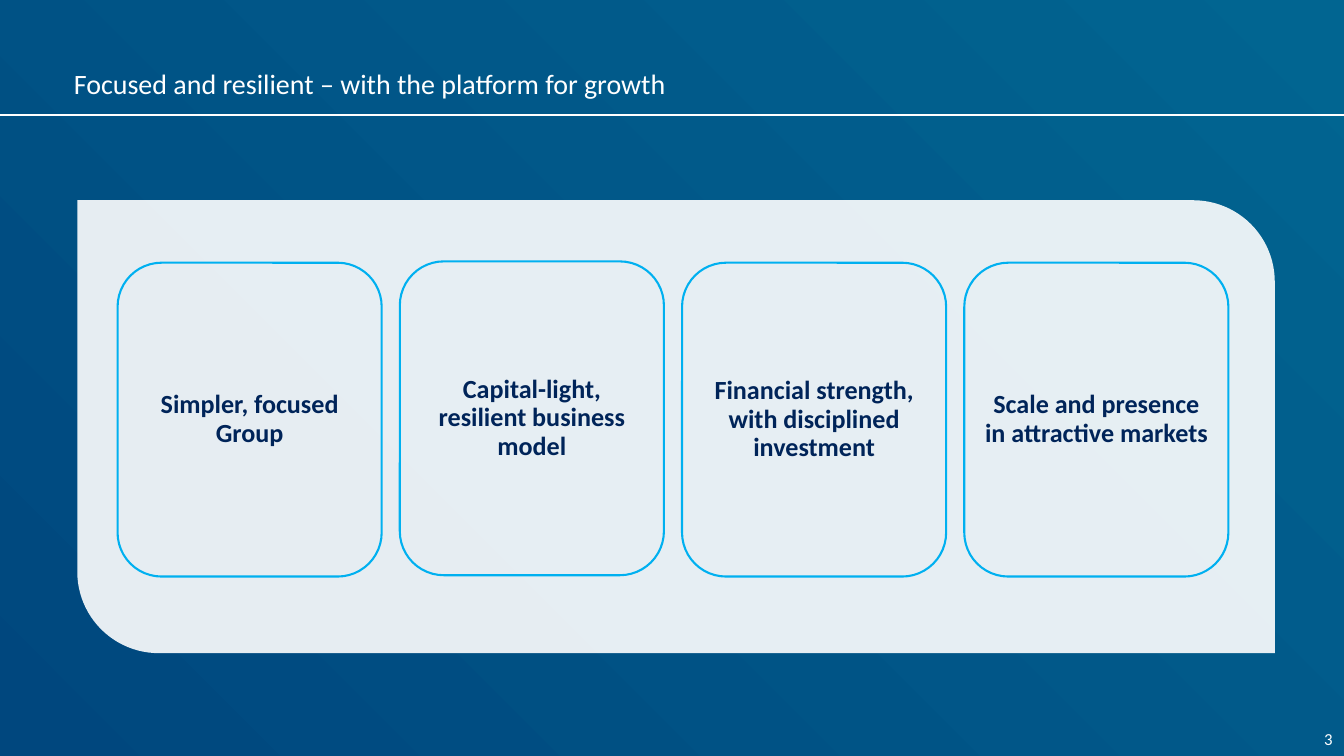
from lxml.etree import SubElement
from pptx import Presentation
from pptx.dml.color import RGBColor
from pptx.enum.shapes import MSO_CONNECTOR, MSO_SHAPE
from pptx.enum.text import MSO_ANCHOR as Anchor, PP_ALIGN as Align
from pptx.oxml.ns import qn
from pptx.util import Inches, Pt

WIDTH, HEIGHT = 20, 11.25
WHITE, NAVY, CYAN = "FFFFFF", "002459", "00B0F0"
DEEP_BLUE, TEAL = "00477E", "016591"

# Label and top edge of each card
STRENGTHS = [
    ("Simpler, focused Group", 3.91),
    ("Capital-light, resilient business model", 3.89),
    ("Financial strength, with disciplined investment", 3.91),
    ("Scale and presence in attractive markets", 3.91),
]


def color(value):
    return RGBColor.from_string(value)


def apply(target, formats):
    for name, value in formats.items():
        setattr(target, name, value)


def write(frame, text, ink, font, paragraph, inset=(0.1, 0.05), anchor=Anchor.TOP):
    across, down = map(Inches, inset)
    apply(frame, dict(word_wrap=True, vertical_anchor=anchor,
                      margin_left=across, margin_right=across,
                      margin_top=down, margin_bottom=down))
    line = frame.paragraphs[0]
    line.text = text
    apply(line, paragraph)
    apply(line.font, dict(name="Calibri", **font))
    line.font.color.rgb = color(ink)


def add_box(slide, preset, box):
    shape = slide.shapes.add_shape(preset, *map(Inches, box))
    shape.shadow.inherit = False
    shape.line.fill.background()
    return shape


def add_backdrop(slide, box):
    fill = add_box(slide, MSO_SHAPE.RECTANGLE, box).fill
    fill.gradient()
    fill.gradient_angle = 45
    for stop, shade in zip(fill.gradient_stops, (DEEP_BLUE, TEAL)):
        stop.color.rgb = color(shade)


def add_header(slide, box):
    # Rule across the slide
    rule_y = Inches(1.71)
    rule = slide.shapes.add_connector(
        MSO_CONNECTOR.STRAIGHT, 0, rule_y, Inches(WIDTH), rule_y)
    rule.line.color.rgb = color(WHITE)
    rule.line.width = Pt(1.5)
    SubElement(rule._element.spPr, qn("a:effectLst"))

    # Title
    title = slide.shapes.add_textbox(*map(Inches, box))
    write(title.text_frame, "Focused and resilient – with the platform for growth",
          WHITE, dict(size=Pt(30)), dict(line_spacing=Pt(42)))


def add_page_number(slide, box):
    number = slide.shapes.add_textbox(*map(Inches, box))
    write(number.text_frame, "3", WHITE, dict(size=Pt(18)), dict(alignment=Align.RIGHT))


def add_panel(slide, box):
    panel = add_box(slide, MSO_SHAPE.ROUND_2_DIAG_RECTANGLE, box)
    panel.adjustments[0] = 0
    panel.adjustments[1] = 0.18
    panel.fill.solid()
    panel.fill.fore_color.rgb = color(WHITE)
    tint = panel._element.spPr.find(qn("a:solidFill"))[0]
    SubElement(tint, qn("a:alpha"), val="90000")


def add_card(slide, box, label):
    card = add_box(slide, MSO_SHAPE.ROUNDED_RECTANGLE, box)
    card.fill.background()
    card.line.color.rgb = color(CYAN)
    card.line.width = Pt(2.25)
    write(card.text_frame, label, NAVY, dict(size=Pt(28), bold=True),
          dict(alignment=Align.CENTER, line_spacing=0.9),
          inset=(0.09, 0.09), anchor=Anchor.MIDDLE)


def add_strengths(slide, box):
    left, top, width, height = box
    add_panel(slide, box)
    for index, (label, card_top) in enumerate(STRENGTHS):
        add_card(slide, (left + 0.6 + index * 4.2, card_top, 3.93, 4.67), label)


def main():
    deck = Presentation()
    apply(deck, dict(slide_width=Inches(WIDTH), slide_height=Inches(HEIGHT)))
    slide = deck.slides.add_slide(deck.slide_layouts[6])
    add_backdrop(slide, (0, 0, WIDTH, HEIGHT))
    add_header(slide, (1, 0.86, 16.62, 0.68))
    add_page_number(slide, (17.6, 10.8, 2.33, 0.4))
    add_strengths(slide, (1.15, 2.98, 17.82, 6.74))
    deck.save("out.pptx")


if __name__ == "__main__":
    main()
